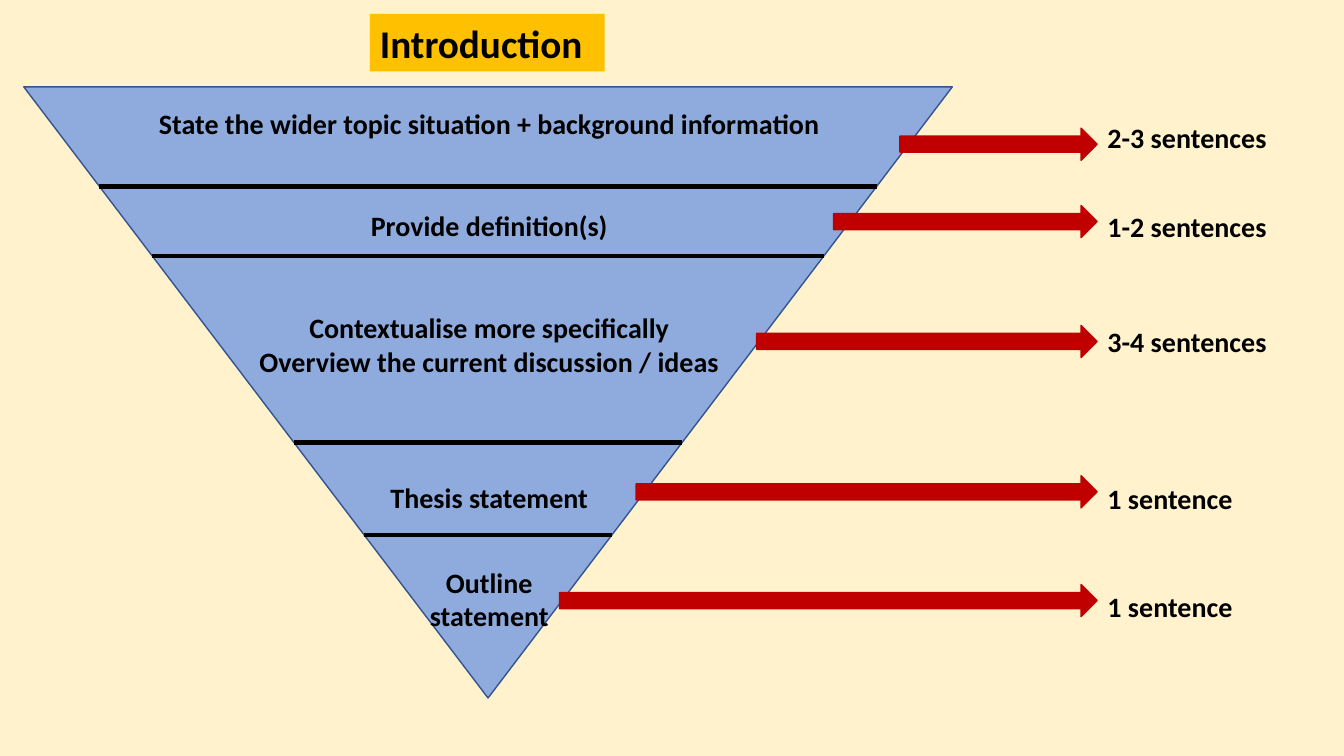
from lxml.etree import SubElement
from pptx import Presentation
from pptx.dml.color import RGBColor
from pptx.enum.shapes import MSO_CONNECTOR, MSO_SHAPE
from pptx.enum.text import MSO_ANCHOR, MSO_AUTO_SIZE, PP_ALIGN
from pptx.oxml.ns import qn
from pptx.util import Cm, Pt


def color(hex_string):
    return RGBColor.from_string(hex_string)


class SlideBuilder:
    font_name = "Calibri"
    text_color = "000000"
    text_size = 20

    def __init__(self, slide, background):
        self.slide = slide
        slide.background.fill.solid()
        slide.background.fill.fore_color.rgb = color(background)

    def format_paragraph(self, paragraph, size, alignment, space_before=0):
        paragraph.alignment = alignment
        paragraph.line_spacing = 1.0
        paragraph.space_before = Pt(space_before)
        for run in paragraph.runs:
            run.font.name = self.font_name
            run.font.size = Pt(size)
            run.font.bold = True
            run.font.color.rgb = color(self.text_color)

    def title(self, text, left, top, width, height, fill):
        shape = self.slide.shapes.title
        shape.left, shape.top = Cm(left), Cm(top)
        shape.width, shape.height = Cm(width), Cm(height)
        shape.fill.solid()
        shape.fill.fore_color.rgb = color(fill)
        frame = shape.text_frame
        frame.text = text
        frame.auto_size = MSO_AUTO_SIZE.NONE
        frame.word_wrap = False
        frame.vertical_anchor = MSO_ANCHOR.MIDDLE
        self.format_paragraph(frame.paragraphs[0], 28, PP_ALIGN.LEFT)

    def shape(self, kind, left, top, width, height, fill, line):
        shape = self.slide.shapes.add_shape(
            kind, Cm(left), Cm(top), Cm(width), Cm(height))
        shape.shadow.inherit = False
        shape.fill.solid()
        shape.fill.fore_color.rgb = color(fill)
        shape.line.color.rgb = color(line)
        shape.line.width = Pt(1)

    def horizontal_line(self, left, right, y):
        connector = self.slide.shapes.add_connector(
            MSO_CONNECTOR.STRAIGHT, Cm(left), Cm(y), Cm(right), Cm(y))
        connector.line.color.rgb = color("000000")
        connector.line.width = Pt(3)
        SubElement(connector._element.spPr, qn("a:effectLst"))

    def text_column(self, lines, left, top, width, height, alignment):
        """Each line is a text and the space before it in points."""
        box = self.slide.shapes.add_textbox(
            Cm(left), Cm(top), Cm(width), Cm(height))
        frame = box.text_frame
        frame.word_wrap = True
        for index, (text, space_before) in enumerate(lines):
            paragraph = frame.add_paragraph() if index else frame.paragraphs[0]
            paragraph.text = text
            self.format_paragraph(
                paragraph, self.text_size, alignment, space_before)


def main():
    presentation = Presentation()
    presentation.slide_width, presentation.slide_height = Cm(33.87), Cm(19.05)
    slide = presentation.slides.add_slide(presentation.slide_layouts[5])
    builder = SlideBuilder(slide, "FFF2CC")

    # Title
    builder.title("Introduction", 9.32, 0.35, 5.92, 1.45, "FFC000")

    # Inverted triangle with dividers that end on its sloping sides
    left, top, width, height = 0.6, 2.19, 23.4, 15.4
    builder.shape(MSO_SHAPE.FLOWCHART_MERGE, left, top, width, height,
                  "8FAADC", "325491")
    for y in (4.7, 6.45, 11.15, 13.49):
        inset = (y - top) / height * width / 2
        builder.horizontal_line(left + inset, left + width - inset, y)

    # Stages of the introduction
    stages = [
        ("State the wider topic situation + background information", 0),
        ("Provide definition(s)", 48.8),
        ("Contextualise more specifically", 48.8),
        ("Overview the current discussion / ideas", 0),
        ("Thesis statement", 73.2),
        ("Outline", 36.6),
        ("statement", 0),
    ]
    builder.text_column(stages, 3.68, 2.57, 17.3, 13.94, PP_ALIGN.CENTER)

    # Length of each stage
    lengths = [
        ("2-3 sentences", 0),
        ("1-2 sentences", 39),
        ("3-4 sentences", 58.6),
        ("1 sentence", 87.8),
        ("1 sentence", 53.7),
    ]
    builder.text_column(lengths, 27.66, 2.92, 5.49, 13.41, PP_ALIGN.LEFT)

    # Arrows from the triangle to the lengths
    arrow_tip = 27.65
    arrow_starts = [(22.68, 3.23), (21.01, 5.18), (19.07, 8.2),
                    (16.03, 11.99), (14.1, 14.73)]
    for start, arrow_top in arrow_starts:
        builder.shape(MSO_SHAPE.RIGHT_ARROW, start, arrow_top,
                      arrow_tip - start, 0.81, "C00000", "C00000")

    presentation.save("out.pptx")


if __name__ == "__main__":
    main()
